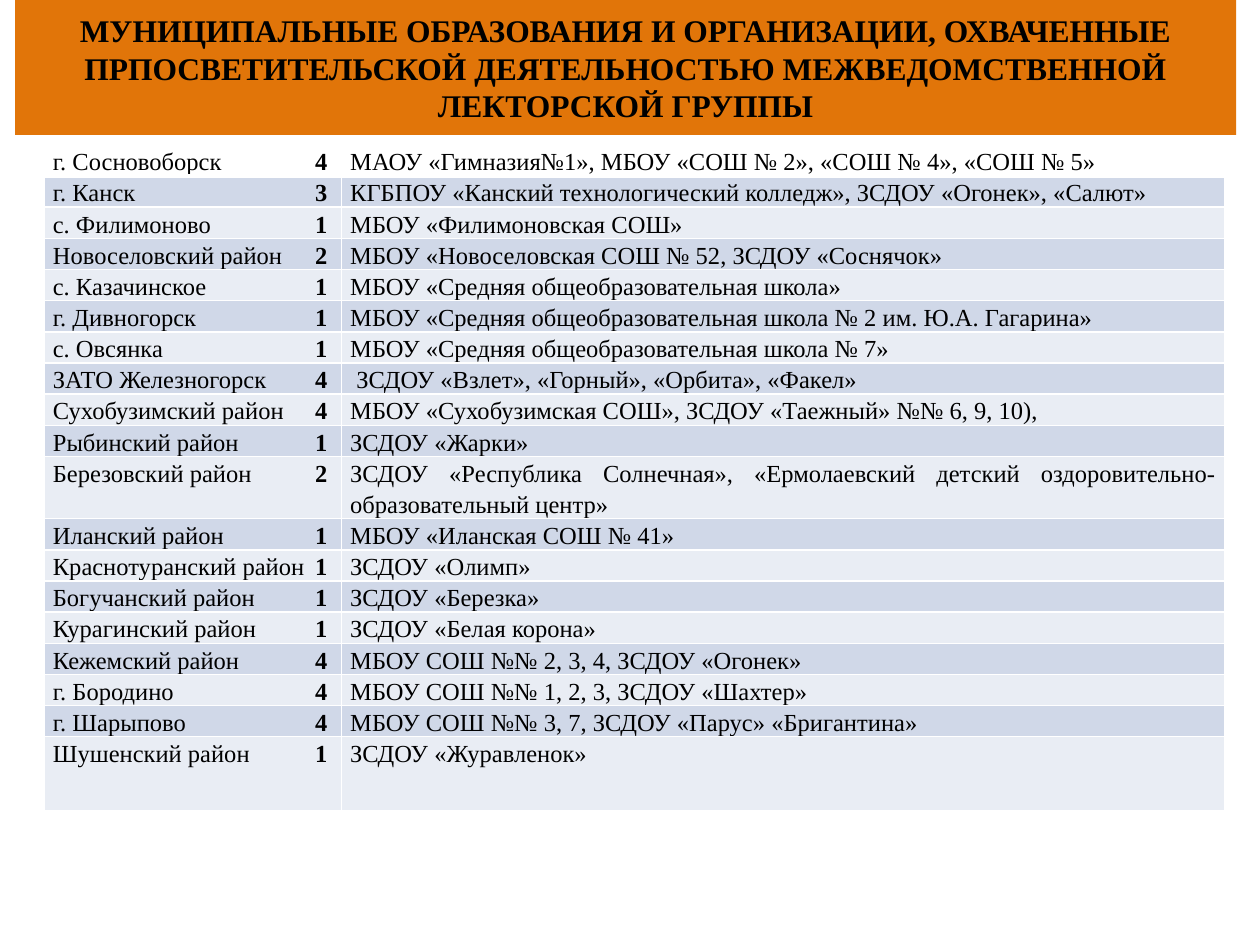
from lxml.etree import SubElement
from pptx import Presentation
from pptx.dml.color import RGBColor
from pptx.enum.text import MSO_ANCHOR, PP_ALIGN
from pptx.oxml.ns import qn
from pptx.util import Inches, Pt

THEME = {
    "font": "Times New Roman", "title_size": 18, "body_size": 14,
    "text": "000000", "banner": "E17509", "border": "FFFFFF",
    "header": "FFFFFF", "bands": ("E9EDF4", "D0D8E8"),
}

TITLE = ("МУНИЦИПАЛЬНЫЕ ОБРАЗОВАНИЯ И ОРГАНИЗАЦИИ, ОХВАЧЕННЫЕ "
         "ПРПОСВЕТИТЕЛЬСКОЙ ДЕЯТЕЛЬНОСТЬЮ МЕЖВЕДОМСТВЕННОЙ ЛЕКТОРСКОЙ ГРУППЫ")

# municipality, number of organisations, organisations
COVERAGE = [
    ("г. Сосновоборск", 4, "МАОУ «Гимназия№1», МБОУ «СОШ № 2», «СОШ № 4», «СОШ № 5»"),
    ("г. Канск", 3, "КГБПОУ «Канский технологический колледж», ЗСДОУ «Огонек», «Салют»"),
    ("с. Филимоново", 1, "МБОУ «Филимоновская СОШ»"),
    ("Новоселовский район", 2, "МБОУ «Новоселовская СОШ № 52, ЗСДОУ «Соснячок»"),
    ("с. Казачинское", 1, "МБОУ «Средняя общеобразовательная школа»"),
    ("г. Дивногорск", 1, "МБОУ «Средняя общеобразовательная школа № 2 им. Ю.А. Гагарина»"),
    ("с. Овсянка", 1, "МБОУ «Средняя общеобразовательная школа № 7»"),
    ("ЗАТО Железногорск", 4, " ЗСДОУ «Взлет», «Горный», «Орбита», «Факел»"),
    ("Сухобузимский район", 4, "МБОУ «Сухобузимская СОШ», ЗСДОУ «Таежный» №№ 6, 9, 10),"),
    ("Рыбинский район", 1, "ЗСДОУ «Жарки»"),
    ("Березовский район", 2, "ЗСДОУ «Республика Солнечная», «Ермолаевский детский "
                             "оздоровительно-образовательный центр»"),
    ("Иланский район", 1, "МБОУ «Иланская СОШ № 41»"),
    ("Краснотуранский район", 1, "ЗСДОУ «Олимп»"),
    ("Богучанский район", 1, "ЗСДОУ «Березка»"),
    ("Курагинский район", 1, "ЗСДОУ «Белая корона»"),
    ("Кежемский район", 4, "МБОУ СОШ №№ 2, 3, 4, ЗСДОУ «Огонек»"),
    ("г. Бородино", 4, "МБОУ СОШ №№ 1, 2, 3, ЗСДОУ «Шахтер»"),
    ("г. Шарыпово", 4, "МБОУ СОШ №№ 3, 7, ЗСДОУ «Парус» «Бригантина»"),
    ("Шушенский район", 1, "ЗСДОУ «Журавленок»"),
]

COLUMN_WIDTHS = (2.36, 7.01)
ROW_HEIGHT = 0.24
TALL_ROWS = {10: 0.49, len(COVERAGE) - 1: 0.59}
COUNT_TAB = 2.18


def add_text(paragraph, text, size, bold=False):
    run = paragraph.add_run()
    run.text = text
    run.font.name = THEME["font"]
    run.font.size = Pt(size)
    run.font.bold = bold
    run.font.color.rgb = RGBColor.from_string(THEME["text"])


def add_right_tab(paragraph, position):
    tabs = SubElement(paragraph._p.get_or_add_pPr(), qn("a:tabLst"))
    SubElement(tabs, qn("a:tab"), pos=str(Inches(position)), algn="r")


def set_borders(cell, bottom_width):
    """Draw all four cell edges; call before filling, as the schema orders lines first."""
    properties = cell._tc.get_or_add_tcPr()
    for side, width in (("L", 1), ("R", 1), ("T", 1), ("B", bottom_width)):
        line = SubElement(properties, qn(f"a:ln{side}"), w=str(Pt(width)))
        fill = SubElement(line, qn("a:solidFill"))
        SubElement(fill, qn("a:srgbClr"), val=THEME["border"])


def format_cell(cell, row):
    """Apply borders, band colour and margins; return the cell's paragraph."""
    set_borders(cell, 3 if row == 0 else 1)
    cell.fill.solid()
    cell.fill.fore_color.rgb = RGBColor.from_string(
        THEME["bands"][row % 2] if row else THEME["header"])
    cell.margin_left = cell.margin_right = Inches(0.07)
    cell.margin_top = cell.margin_bottom = 0
    paragraph = cell.text_frame.paragraphs[0]
    paragraph.alignment = PP_ALIGN.JUSTIFY
    paragraph.line_spacing = 1.15
    return paragraph


def add_banner(slide):
    banner = slide.shapes.title
    banner.left, banner.top = Inches(0.12), Inches(0)
    banner.width, banner.height = Inches(9.69), Inches(1.07)
    banner.fill.solid()
    banner.fill.fore_color.rgb = RGBColor.from_string(THEME["banner"])
    banner.text_frame.vertical_anchor = MSO_ANCHOR.MIDDLE
    heading = banner.text_frame.paragraphs[0]
    heading.alignment = PP_ALIGN.CENTER
    add_text(heading, TITLE, THEME["title_size"], bold=True)


def add_coverage_table(slide):
    heights = [TALL_ROWS.get(row, ROW_HEIGHT) for row in range(len(COVERAGE))]
    table = slide.shapes.add_table(
        len(COVERAGE), len(COLUMN_WIDTHS), Inches(0.35), Inches(1.15),
        Inches(sum(COLUMN_WIDTHS)), Inches(sum(heights))).table
    for column, width in zip(table.columns, COLUMN_WIDTHS):
        column.width = Inches(width)

    size = THEME["body_size"]
    for row, (municipality, count, organisations) in enumerate(COVERAGE):
        table.rows[row].height = Inches(heights[row])
        place, schools = (format_cell(table.cell(row, column), row) for column in (0, 1))
        add_right_tab(place, COUNT_TAB)
        add_text(place, f"{municipality}\t", size)
        add_text(place, str(count), size, bold=True)
        add_text(schools, organisations, size)


def main():
    deck = Presentation()
    deck.slide_width, deck.slide_height = Inches(10), Inches(7.5)
    slide = deck.slides.add_slide(deck.slide_layouts[5])
    add_banner(slide)
    add_coverage_table(slide)
    deck.save("out.pptx")


if __name__ == "__main__":
    main()
